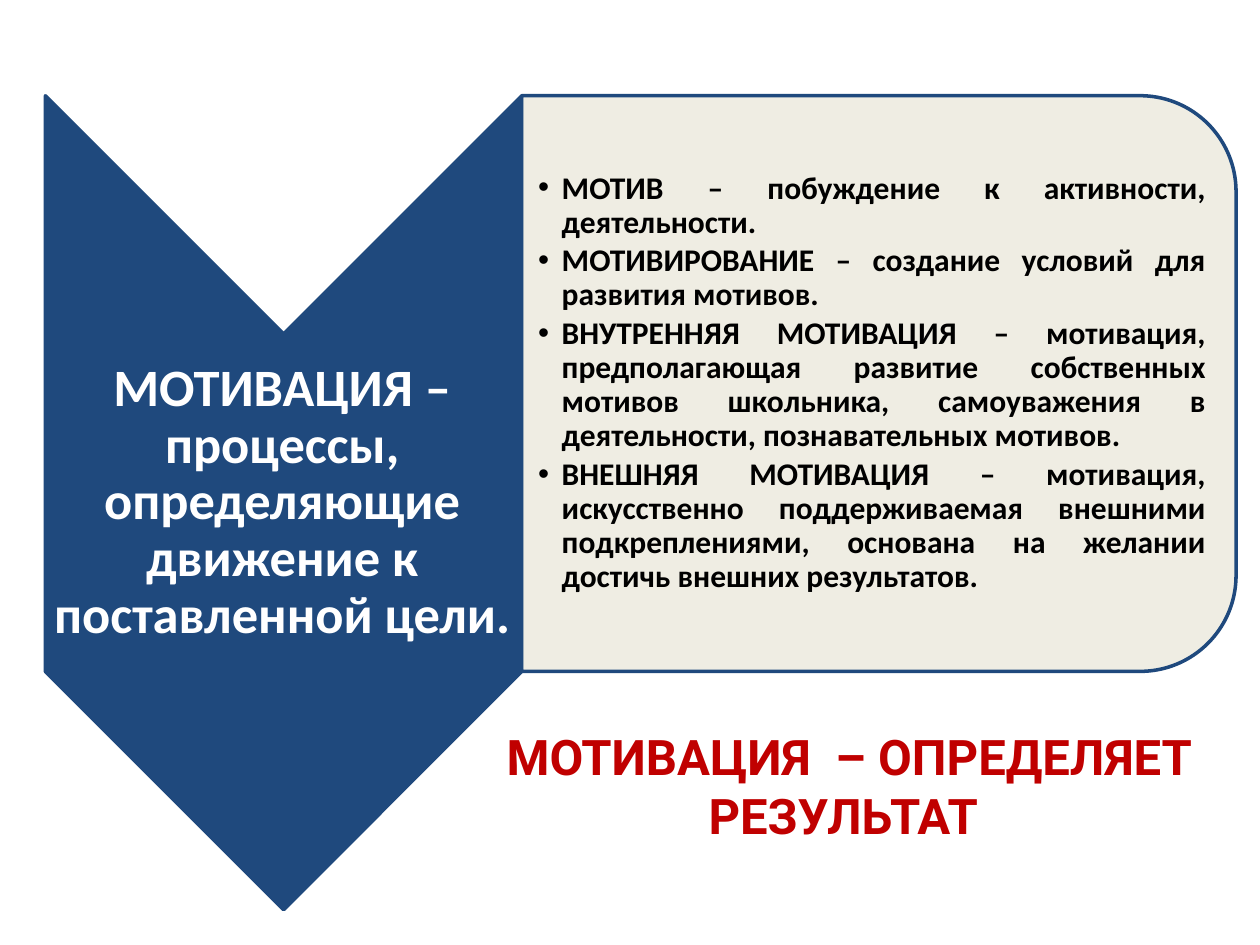
from lxml import etree
from pptx import Presentation
from pptx.dml.color import RGBColor
from pptx.enum.shapes import MSO_SHAPE
from pptx.enum.text import MSO_ANCHOR, MSO_AUTO_SIZE, PP_ALIGN
from pptx.oxml.ns import qn
from pptx.util import Pt

CHEVRON, PANEL = MSO_SHAPE.CHEVRON, MSO_SHAPE.ROUND_2_SAME_RECTANGLE
TOP, MIDDLE = MSO_ANCHOR.TOP, MSO_ANCHOR.MIDDLE
CENTER, JUSTIFY = PP_ALIGN.CENTER, PP_ALIGN.JUSTIFY
NO_AUTOFIT = MSO_AUTO_SIZE.NONE

COLORS = {"navy": "1F497D", "cream": "EEECE1", "white": "FFFFFF", "black": "000000", "red": "C00000"}
DEFINITIONS = [
    "МОТИВ – побуждение к активности, деятельности.",
    "МОТИВИРОВАНИЕ – создание условий для развития мотивов.",
    "ВНУТРЕННЯЯ МОТИВАЦИЯ – мотивация, предполагающая развитие собственных мотивов школьника, "
    "самоуважения в деятельности, познавательных мотивов.",
    "ВНЕШНЯЯ МОТИВАЦИЯ – мотивация, искусственно поддерживаемая внешними подкреплениями, "
    "основана на желании достичь внешних результатов.",
]


def add_rotated_shape(kind, left, top, width, height, fill):
    shape = slide.shapes.add_shape(kind, Pt(left), Pt(top), Pt(width), Pt(height))
    shape.rotation = 90
    shape.shadow.inherit = False
    shape.fill.solid()
    shape.fill.fore_color.rgb = RGBColor.from_string(COLORS[fill])
    shape.line.color.rgb = RGBColor.from_string(COLORS["navy"])
    shape.line.width = Pt(2)
    slide.shapes.title.element.addprevious(shape.element)
    return shape


def write_text(shape, box, insets, anchor, lines, font_name, size, color, alignment, spacing, after):
    shape.left, shape.top, shape.width, shape.height = map(Pt, box)
    frame = shape.text_frame
    frame.word_wrap = True
    frame.auto_size = NO_AUTOFIT
    frame.vertical_anchor = anchor
    frame.margin_left, frame.margin_top, frame.margin_right, frame.margin_bottom = map(Pt, insets)
    frame.text = "\n".join(lines)
    for paragraph in frame.paragraphs:
        paragraph.alignment = alignment
        paragraph.line_spacing = spacing
        paragraph.space_before = Pt(0)
        paragraph.space_after = Pt(after)
        paragraph.font.name = font_name
        paragraph.font.size = Pt(size)
        paragraph.font.bold = True
        paragraph.font.color.rgb = RGBColor.from_string(COLORS[color])


presentation = Presentation()
presentation.slide_width, presentation.slide_height = Pt(720), Pt(540)
slide = presentation.slides.add_slide(presentation.slide_layouts[1])

chevron = add_rotated_shape(CHEVRON, -70.5, 151.2, 465.1, 272.2, "navy")
chevron.adjustments[0] = 0.5
panel = add_rotated_shape(PANEL, 337.7, 15.1, 329, 408.2, "cream")
panel_color = panel.fill._xPr.find(qn("a:solidFill"))[0]
etree.SubElement(panel_color, qn("a:alpha"), val="90000")

write_text(slide.shapes.title, (280.8, 411.8, 408.2, 74.9), (7.2, 3.6, 7.2, 3.6), TOP,
           ["МОТИВАЦИЯ  – ОПРЕДЕЛЯЕТ РЕЗУЛЬТАТ "], "Roboto", 28, "red", CENTER, 1.0, 0)

definitions = slide.placeholders[1]
write_text(definitions, (297.4, 70.6, 392.4, 296.6), (10.1, 0.7, 0.7, 0.7), MIDDLE,
           DEFINITIONS, "Calibri", 18, "black", JUSTIFY, 0.9, 2.7)
for paragraph in definitions.text_frame.paragraphs:
    properties = paragraph._p.get_or_add_pPr()
    properties.set("marL", str(Pt(13.5)))
    properties.set("indent", str(Pt(-13.5)))
    etree.SubElement(properties, qn("a:buChar"), char="•")
    properties.append(properties.find(qn("a:defRPr")))

motivation = slide.shapes.add_textbox(0, 0, 0, 0)
write_text(motivation, (25.2, 190.8, 272.2, 193), (1.4, 1.4, 1.4, 1.4), MIDDLE,
           ["МОТИВАЦИЯ – процессы, определяющие движение к поставленной цели."],
           "Calibri", 30, "white", CENTER, 0.9, 10.5)

presentation.save("out.pptx")
